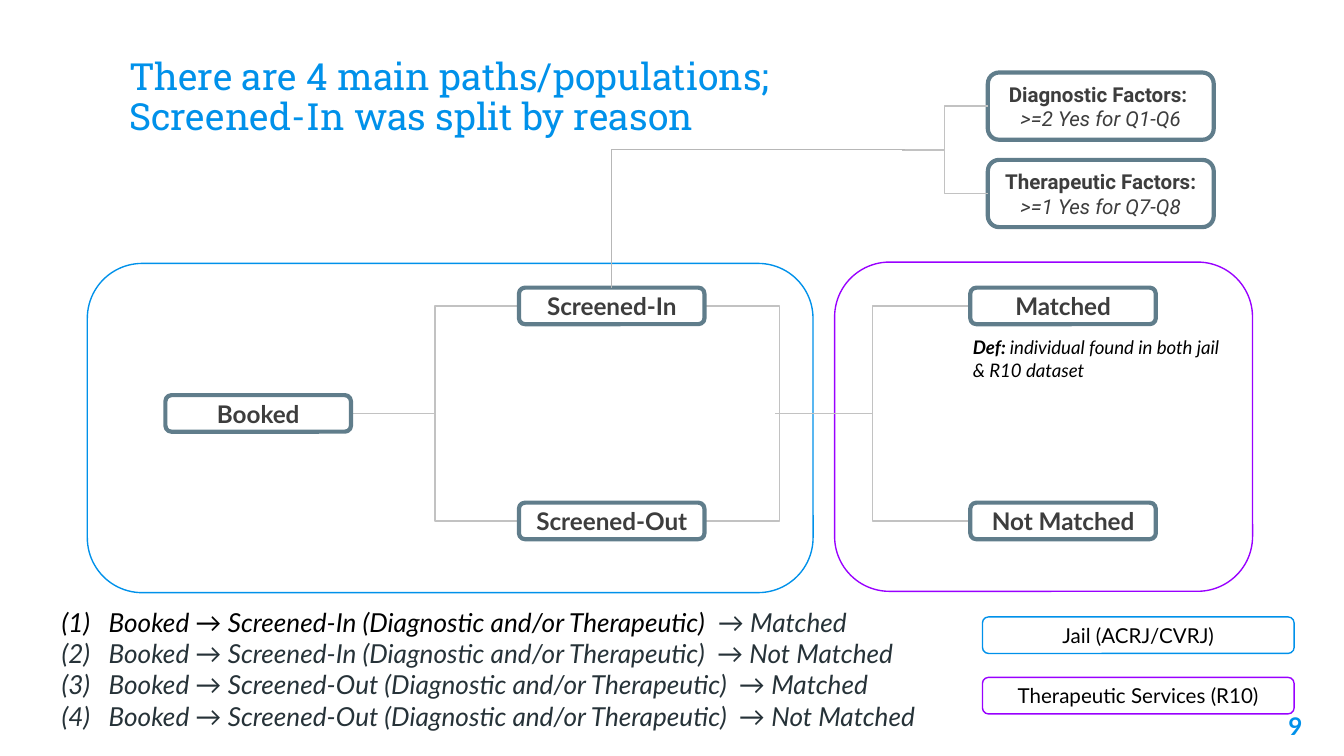
import pptx
import pptx.dml.color
import pptx.enum.shapes
import pptx.enum.text
import pptx.oxml
import pptx.oxml.ns
import pptx.util

Pt = pptx.util.Pt
ALIGN = pptx.enum.text.PP_ALIGN
ANCHOR = pptx.enum.text.MSO_ANCHOR
JAIL, SERVICES, STEP, LINK = "0091EA", "9900FF", "607D8B", "C2C2C2"
BLACK, CHARCOAL, SLATE = "000000", "3D3D3D", "263238"

STEP_TEXT = {"name": "Lato", "size": Pt(13), "bold": True, "color": CHARCOAL}
FACTOR_TEXT = {"name": "Roboto", "size": Pt(11), "bold": True, "color": CHARCOAL}
RULE_TEXT = {**FACTOR_TEXT, "bold": False, "italic": True}
KEY_TEXT = {"name": "Lato", "size": Pt(11), "color": BLACK}
PATH_TEXT = {"name": "Lato", "size": Pt(14), "italic": True, "color": SLATE}
NOTE_TEXT = {"name": "Lato", "size": Pt(10), "italic": True, "color": BLACK}
TITLE_TEXT = {"name": "Roboto Slab", "size": Pt(20), "color": JAIL}
NUMBER_TEXT = {"name": "Lato", "size": Pt(13), "bold": True, "color": JAIL}

STEP_WIDTH, STEP_HEIGHT = 99.4, 19.6
BOOKED_X, SCREEN_X, MATCH_X = 88.6, 278, 519.8
STEP_TOP, STEP_GAP = 154.1, 57.6
FACTOR_X, FACTOR_WIDTH, FACTOR_HEIGHT = 529.2, 121, 36
FACTOR_TOP, FACTOR_GAP = 38.9, 46.8


def rgb(value):
    return pptx.dml.color.RGBColor.from_string(value)


def apply_format(target, values):
    for key, value in values.items():
        if key == "color":
            target.color.rgb = rgb(value)
        else:
            setattr(target, key, value)


def write(frame, paragraphs, align=ALIGN.LEFT, anchor=ANCHOR.TOP):
    apply_format(frame, {
        "word_wrap": True, "vertical_anchor": anchor,
        "auto_size": pptx.enum.text.MSO_AUTO_SIZE.NONE,
        "margin_left": Pt(7.2), "margin_right": Pt(7.2),
        "margin_top": Pt(7.2), "margin_bottom": Pt(7.2),
    })
    for index, runs in enumerate(paragraphs):
        paragraph = frame.add_paragraph() if index else frame.paragraphs[0]
        paragraph.alignment = align
        for text, font in runs:
            run = paragraph.add_run()
            run.text = text
            apply_format(run.font, font)


def add_box(slide, bounds, color, width, paragraphs=()):
    box = slide.shapes.add_shape(
        pptx.enum.shapes.MSO_SHAPE.ROUNDED_RECTANGLE, *map(Pt, bounds))
    box.shadow.inherit = False
    box.fill.background()
    apply_format(box.line, {"color": color, "width": Pt(width)})
    write(box.text_frame, paragraphs, ALIGN.CENTER, ANCHOR.MIDDLE)


def add_text(slide, bounds, paragraphs, align=ALIGN.LEFT):
    frame = slide.shapes.add_textbox(*map(Pt, bounds)).text_frame
    write(frame, paragraphs, align)
    return frame


def add_elbow(slide, start, end, color=LINK, bend=None):
    elbow = slide.shapes.add_connector(
        pptx.enum.shapes.MSO_CONNECTOR.ELBOW, *map(Pt, start + end))
    apply_format(elbow.line, {"color": color, "width": Pt(0.75)})
    properties = elbow._element.spPr
    properties.append(pptx.oxml.parse_xml(
        f'<a:effectLst {pptx.oxml.ns.nsdecls("a")}/>'))
    if bend is not None:
        geometry = properties.find(pptx.oxml.ns.qn("a:prstGeom"))
        adjustments = geometry.get_or_add_avLst()
        adjustments.append(pptx.oxml.parse_xml(
            f'<a:gd {pptx.oxml.ns.nsdecls("a")} name="adj1" fmla="val {bend}"/>'))


def add_title(slide, text):
    title = slide.shapes.title
    apply_format(title, {"left": Pt(61.9), "top": Pt(24.5),
                         "width": Pt(439.2), "height": Pt(56.9)})
    write(title.text_frame, [[(text, TITLE_TEXT)]], anchor=ANCHOR.BOTTOM)
    title.text_frame.paragraphs[0].line_spacing = 0.9


def number_paragraph(paragraph, color):
    properties = paragraph._p.get_or_add_pPr()
    properties.set("marL", str(Pt(36)))
    properties.set("indent", str(Pt(-25.2)))
    namespace = pptx.oxml.ns.nsdecls("a")
    for xml in (f'<a:buClr {namespace}><a:srgbClr val="{color}"/></a:buClr>',
                f'<a:buFont {namespace} typeface="Lato"/>',
                f'<a:buAutoNum {namespace} type="arabicParenBoth"/>'):
        properties.append(pptx.oxml.parse_xml(xml))


def add_paths(slide):
    paths, colors = [], []
    for screening in ("Screened-In", "Screened-Out"):
        for outcome in ("Matched", "Not Matched"):
            color = SLATE if paths else BLACK
            colors.append(color)
            paths.append([
                (f"Booked → {screening} (Diagnostic and/or Therapeutic) ",
                 {**PATH_TEXT, "color": color}),
                (f" → {outcome}", PATH_TEXT)])
    frame = add_text(slide, (15.1, 317.5, 678.2, 82.1), paths)
    for paragraph, color in zip(frame.paragraphs, colors):
        number_paragraph(paragraph, color)


def add_flow(slide):
    upper, middle, lower = (
        STEP_TOP + STEP_HEIGHT / 2 + row * STEP_GAP for row in range(3))
    for y in (lower, upper):
        add_elbow(slide, (BOOKED_X + STEP_WIDTH, middle), (SCREEN_X, y))
        add_elbow(slide, (457.9, middle), (SCREEN_X + STEP_WIDTH, y))
        add_elbow(slide, (MATCH_X, y), (415.4, middle))
    for label, left, row in (
            ("Booked", BOOKED_X, 1),
            ("Screened-In", SCREEN_X, 0), ("Screened-Out", SCREEN_X, 2),
            ("Matched", MATCH_X, 0), ("Not Matched", MATCH_X, 2)):
        add_box(slide, (left, STEP_TOP + row * STEP_GAP, STEP_WIDTH, STEP_HEIGHT),
                STEP, 2.25, [[(label, STEP_TEXT)]])


def add_factors(slide):
    split_y = FACTOR_TOP + (FACTOR_HEIGHT + FACTOR_GAP) / 2
    for row, (label, rule) in enumerate((
            ("Diagnostic Factors: ", ">=2 Yes for Q1-Q6"),
            ("Therapeutic Factors: ", ">=1 Yes for Q7-Q8"))):
        top = FACTOR_TOP + row * FACTOR_GAP
        add_box(slide, (FACTOR_X, top, FACTOR_WIDTH, FACTOR_HEIGHT), STEP, 2.25,
                [[(label, FACTOR_TEXT)], [(rule, RULE_TEXT)]])
        add_elbow(slide, (483.1, split_y), (FACTOR_X, top + FACTOR_HEIGHT / 2))
    add_elbow(slide, (SCREEN_X + STEP_WIDTH / 2, STEP_TOP), (484.6, split_y),
              "B7B7B7", 0)


def main():
    deck = pptx.Presentation()
    apply_format(deck, {"slide_width": Pt(720), "slide_height": Pt(405)})
    slide = deck.slides.add_slide(deck.slide_layouts[5])
    add_title(slide, "There are 4 main paths/populations; "
                     "Screened-In was split by reason")
    add_box(slide, (46.8, 141.1, 388.8, 176.4), JAIL, 0.75)
    add_box(slide, (447.1, 140.4, 223.9, 176.4), SERVICES, 0.75)
    add_flow(slide)
    add_factors(slide)
    add_paths(slide)
    for label, color, top in (("Jail (ACRJ/CVRJ)", JAIL, 330.5),
                              ("Therapeutic Services (R10)", SERVICES, 362.9)):
        add_box(slide, (526.3, top, 167, 19.6), color, 0.75, [[(label, KEY_TEXT)]])
    add_text(slide, (514.1, 172.8, 154.1, 38.9),
             [[("Def: ", {**NOTE_TEXT, "bold": True}),
               ("individual found in both jail & R10 dataset", NOTE_TEXT)]])
    add_text(slide, (661.7, 373.7, 43.2, 31), [[("9", NUMBER_TEXT)]], ALIGN.RIGHT)
    deck.save("out.pptx")


if __name__ == "__main__":
    main()
